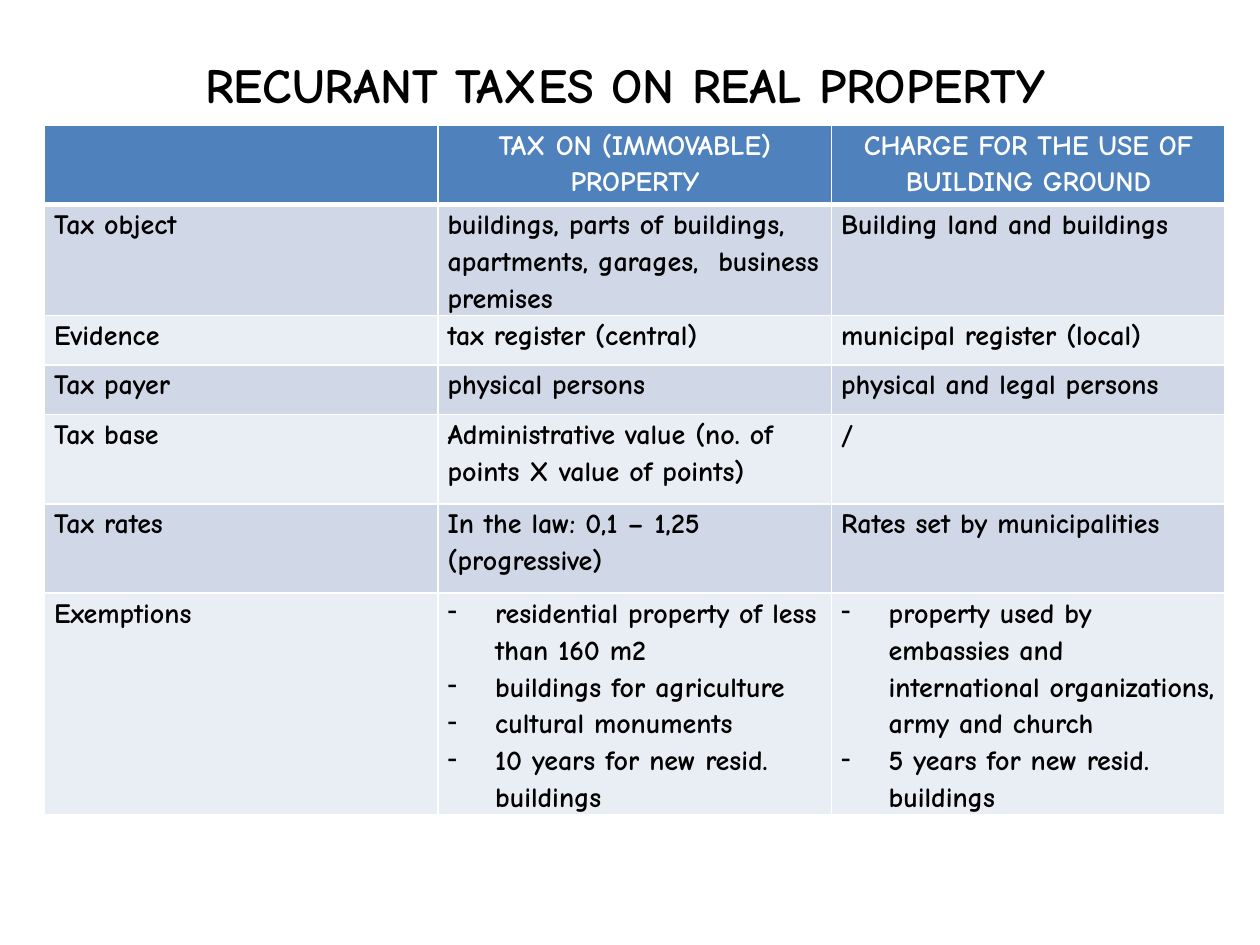
import pptx
import pptx.dml.color
import pptx.enum.text
import pptx.oxml
import pptx.oxml.ns
import pptx.util

Cm = pptx.util.Cm
Pt = pptx.util.Pt
RGB = pptx.dml.color.RGBColor
Align = pptx.enum.text.PP_ALIGN
Anchor = pptx.enum.text.MSO_ANCHOR

BLACK = RGB(0x00, 0x00, 0x00)
WHITE = RGB(0xFF, 0xFF, 0xFF)
BLUE = RGB(0x4F, 0x81, 0xBD)
BANDS = [RGB(0xD0, 0xD8, 0xE8), RGB(0xE9, 0xED, 0xF4)]

HEAD = ["", "TAX ON (IMMOVABLE) PROPERTY",
        "CHARGE FOR THE USE OF BUILDING GROUND"]
# Each row: height in cm, then its cells; a list is a dashed list
ROWS = [
    (2.2, "Tax object",
     "buildings, parts of buildings, apartments, garages,  business premises",
     "Building land and buildings"),
    (1, "Evidence", "tax register (central)", "municipal register (local)"),
    (1, "Tax payer", "physical persons", "physical and legal persons"),
    (1.8, "Tax base",
     "Administrative value (no. of points X value of points)", "/"),
    (1.8, "Tax rates", "In the law: 0,1 – 1,25 (progressive)",
     "Rates set by municipalities"),
    (4.4, "Exemptions",
     ["residential property of less than 160 m2", "buildings for agriculture",
      "cultural monuments", "10 years for new resid. buildings"],
     ["property used by embassies and international organizations, "
      "army and church", "5 years for new resid. buildings"]),
]


class Deck:
    face = "Comic Neue"

    def __init__(self):
        self.prs = pptx.Presentation()
        self.prs.slide_width = Cm(25.4)
        self.prs.slide_height = Cm(19.05)
        self.slide = self.prs.slides.add_slide(self.prs.slide_layouts[5])

    def style(self, para, size, color, align):
        font = para.font
        font.name, font.size, font.bold = self.face, Pt(size), True
        font.color.rgb = color
        para.alignment = align

    def title(self, text, left, top, width, height):
        box = self.slide.shapes.title
        box.left, box.top = Cm(left), Cm(top)
        box.width, box.height = Cm(width), Cm(height)
        frame = box.text_frame
        frame.text = text
        frame.vertical_anchor = Anchor.MIDDLE
        self.style(frame.paragraphs[0], 28, BLACK, Align.CENTER)

    def dash(self, para):
        props = para._p.get_or_add_pPr()
        props.set("marL", str(Cm(0.96)))
        props.set("indent", str(-Cm(0.96)))
        mark = pptx.oxml.parse_xml(
            f'<a:buChar {pptx.oxml.ns.nsdecls("a")} char="-"/>')
        props.append(mark)

    def edge(self, cell, side, width):
        cell._tc.get_or_add_tcPr().append(pptx.oxml.parse_xml(
            f'<a:ln{side} {pptx.oxml.ns.nsdecls("a")} w="{Pt(width)}">'
            f'<a:solidFill><a:srgbClr val="{WHITE}"/></a:solidFill>'
            f'</a:ln{side}>'))

    def cell(self, cell, text, row):
        head = row == 0
        # Borders come before the fill
        thick = {"T": 3 if row == 1 else 1, "B": 3 if head else 1}
        for side in "LRTB":
            self.edge(cell, side, thick.get(side, 1))
        cell.fill.solid()
        cell.fill.fore_color.rgb = BLUE if head else BANDS[(row - 1) % 2]
        cell.margin_left = cell.margin_right = Cm(0.19)
        cell.margin_top = cell.margin_bottom = 0

        items = text if isinstance(text, list) else [text]
        cell.text = "\n".join(items)
        for para in cell.text_frame.paragraphs:
            self.style(para, 16, WHITE if head else BLACK,
                       Align.CENTER if head else Align.LEFT)
            para.line_spacing = 1.15
            if items is text:
                self.dash(para)

    def table(self, rows, left, top, width):
        high = sum(row[0] for row in rows)
        grid = self.slide.shapes.add_table(
            len(rows), len(rows[0]) - 1,
            Cm(left), Cm(top), Cm(width), Cm(high)).table
        for r, (size, *texts) in enumerate(rows):
            grid.rows[r].height = Cm(size)
            for c, text in enumerate(texts):
                self.cell(grid.cell(r, c), text, r)


def main():
    deck = Deck()
    # Heading
    deck.title("RECURANT TAXES ON REAL PROPERTY", 0.7, 0.9, 23.8, 1.6)
    # Comparison of the two taxes
    deck.table([(1.6, *HEAD), *ROWS], 0.9, 2.52, 23.8)
    deck.prs.save("out.pptx")


if __name__ == "__main__":
    main()
